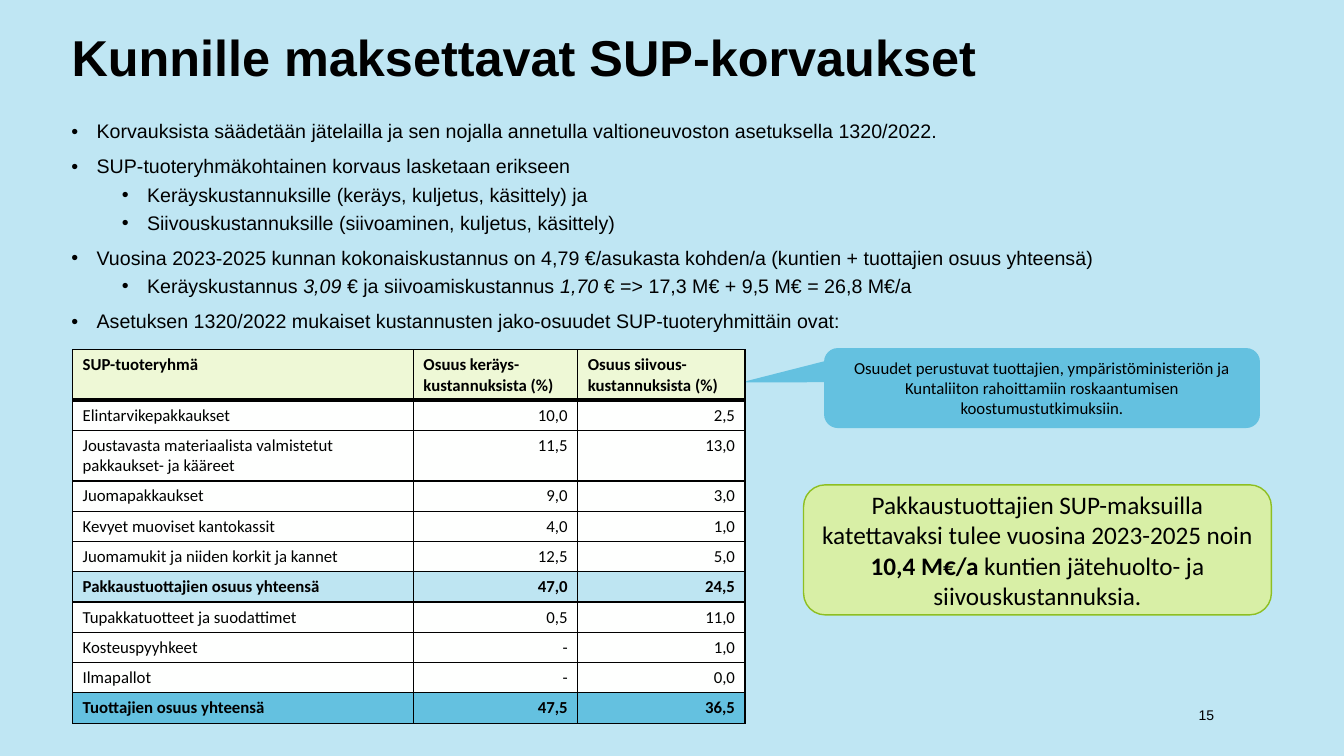
from dataclasses import dataclass
from typing import Any

from lxml import etree
from pptx import Presentation
from pptx.dml.color import RGBColor
from pptx.enum.shapes import MSO_SHAPE
from pptx.enum.text import MSO_ANCHOR, MSO_AUTO_SIZE, PP_ALIGN
from pptx.oxml.ns import qn
from pptx.util import Emu, Pt

CALLOUT = MSO_SHAPE.ROUNDED_RECTANGULAR_CALLOUT
MIDDLE = MSO_ANCHOR.MIDDLE
NO_FIT = MSO_AUTO_SIZE.NONE
LEFT, CENTER, RIGHT = PP_ALIGN.LEFT, PP_ALIGN.CENTER, PP_ALIGN.RIGHT

BLACK, WHITE = "000000", "FEFFFE"
PALE_BLUE, BLUE, PALE_GREEN = "BEE5F2", "64C1E0", "EEF8D6"
Box = tuple[int, int, int, int]


@dataclass
class Bullet:
    text: str  # parts between asterisks are italic
    level: int = 0


@dataclass
class Row:
    cells: tuple[str, str, str]
    fill: str = WHITE
    bold: bool = False
    height: int = 30


@dataclass
class Callout:
    box: Box
    text: str  # parts between asterisks are bold
    size: int
    fill: str
    line: str
    tip: tuple[float, float]


BULLETS = [
    Bullet("Korvauksista säädetään jätelailla ja sen nojalla annetulla "
           "valtioneuvoston asetuksella 1320/2022."),
    Bullet("SUP-tuoteryhmäkohtainen korvaus lasketaan erikseen"),
    Bullet("Keräyskustannuksille (keräys, kuljetus, käsittely) ja", 1),
    Bullet("Siivouskustannuksille (siivoaminen, kuljetus, käsittely)", 1),
    Bullet("Vuosina 2023-2025 kunnan kokonaiskustannus on 4,79 €/asukasta "
           "kohden/a (kuntien + tuottajien osuus yhteensä)"),
    Bullet("Keräyskustannus *3,09* € ja siivoamiskustannus *1,70* € "
           "=> 17,3 M€ + 9,5 M€ = 26,8 M€/a", 1),
    Bullet("Asetuksen 1320/2022 mukaiset kustannusten jako-osuudet "
           "SUP-tuoteryhmittäin ovat:"),
]
COLUMNS = [338, 163, 166]
ROWS = [
    Row(("SUP-tuoteryhmä", "Osuus keräys-kustannuksista (%)",
         "Osuus siivous-kustannuksista (%)"), PALE_GREEN, True, 50),
    Row(("Elintarvikepakkaukset", "10,0", "2,5")),
    Row(("Joustavasta materiaalista valmistetut pakkaukset- ja kääreet",
         "11,5", "13,0"), height=50),
    Row(("Juomapakkaukset", "9,0", "3,0")),
    Row(("Kevyet muoviset kantokassit", "4,0", "1,0")),
    Row(("Juomamukit ja niiden korkit ja kannet", "12,5", "5,0")),
    Row(("Pakkaustuottajien osuus yhteensä", "47,0", "24,5"), PALE_BLUE, True),
    Row(("Tupakkatuotteet ja suodattimet", "0,5", "11,0")),
    Row(("Kosteuspyyhkeet", "-", "1,0")),
    Row(("Ilmapallot", "-", "0,0")),
    Row(("Tuottajien osuus yhteensä", "47,5", "36,5"), BLUE, True),
]
CALLOUTS = [
    Callout((797, 481, 464, 129),
            "Pakkaustuottajien SUP-maksuilla katettavaksi tulee vuosina "
            "2023-2025 noin *10,4 M€/a* kuntien jätehuolto- ja "
            "siivouskustannuksia.", 18, "D8EFA6", "8EBF22", (-0.08, 0.5)),
    Callout((818, 346, 431, 78),
            "Osuudet perustuvat tuottajien, ympäristöministeriön ja "
            "Kuntaliiton rahoittamiin roskaantumisen koostumustutkimuksiin.",
            12, BLUE, BLUE, (-0.68, -0.08)),
]


def px(n: int) -> Emu:
    """100 px to the inch."""
    return Emu(n * 9144)


def rgb(color: str) -> RGBColor:
    return RGBColor.from_string(color)


def style(r: Any, size: int, name: str, bold: bool = False,
          italic: bool = False) -> None:
    r.font.size, r.font.name = Pt(size), name
    r.font.bold, r.font.italic = bold, italic
    r.font.color.rgb = rgb(BLACK)


def write(p: Any, text: str, size: int, name: str, align: Any = LEFT,
          bold: bool = False, mark: str = "bold") -> None:
    """Fill a paragraph; parts between asterisks get the mark."""
    p.alignment = align
    for i, part in enumerate(text.split("*")):
        r = p.add_run()
        r.text = part
        marked = i % 2 == 1
        style(r, size, name, bold or (marked and mark == "bold"),
              marked and mark == "italic")


def text_box(s: Any, box: Box) -> Any:
    tf = s.shapes.add_textbox(*map(px, box)).text_frame
    tf.word_wrap = True
    return tf


def add_title(s: Any, text: str, box: Box) -> None:
    sp = s.shapes.title
    sp.left, sp.top, sp.width, sp.height = map(px, box)
    tf = sp.text_frame
    tf.text = text
    tf.auto_size, tf.vertical_anchor = NO_FIT, MIDDLE
    p = tf.paragraphs[0]
    p.alignment, p.line_spacing = LEFT, 0.9
    style(p.runs[0], 36, "Arial", bold=True)


def add_bullets(s: Any, bullets: list[Bullet], box: Box) -> None:
    tf = text_box(s, box)
    for i, bullet in enumerate(bullets):
        p = tf.add_paragraph() if i else tf.paragraphs[0]
        p.level = bullet.level
        pPr = p._p.get_or_add_pPr()
        pPr.set("marL", str(px(25 + 50 * bullet.level)))
        pPr.set("indent", str(px(-25)))
        etree.SubElement(pPr, qn("a:buFont"), typeface="Arial")
        etree.SubElement(pPr, qn("a:buChar"), char="•")
        p.line_spacing = 0.9
        if i:
            p.space_before = Pt(5 if bullet.level else 10)
        write(p, bullet.text, 14, "Arial", mark="italic")


def add_border(cell: Any, side: str, points: int) -> None:
    ln = etree.SubElement(cell._tc.get_or_add_tcPr(), qn(f"a:ln{side}"),
                          w=str(Pt(points)))
    fill = etree.SubElement(ln, qn("a:solidFill"))
    etree.SubElement(fill, qn("a:srgbClr"), val=BLACK)


def add_shares(s: Any, rows: list[Row], left: int, top: int) -> None:
    size = (sum(COLUMNS), sum(row.height for row in rows))
    table = s.shapes.add_table(len(rows), len(COLUMNS),
                               *map(px, (left, top, *size))).table
    table.horz_banding = False
    for column, width in zip(table.columns, COLUMNS):
        column.width = px(width)
    for i, row in enumerate(rows):
        table.rows[i].height = px(row.height)
        for j, text in enumerate(row.cells):
            cell = table.cell(i, j)
            align = RIGHT if i and j else LEFT
            write(cell.text_frame.paragraphs[0], text, 12, "Calibri", align,
                  row.bold)
            # Heavy rule between the header and the first row
            widths = {"L": 1, "R": 1, "T": 3 if i == 1 else 1,
                      "B": 3 if i == 0 else 1}
            for side, points in widths.items():
                add_border(cell, side, points)
            cell.fill.solid()
            cell.fill.fore_color.rgb = rgb(row.fill)


def add_callout(s: Any, callout: Callout) -> None:
    sp = s.shapes.add_shape(CALLOUT, *map(px, callout.box))
    sp.shadow.inherit = False
    sp.adjustments[0], sp.adjustments[1] = callout.tip
    sp.fill.solid()
    sp.fill.fore_color.rgb = rgb(callout.fill)
    sp.line.color.rgb = rgb(callout.line)
    sp.line.width = Pt(1)
    tf = sp.text_frame
    tf.word_wrap, tf.vertical_anchor = True, MIDDLE
    write(tf.paragraphs[0], callout.text, callout.size, "Calibri", CENTER)


def main() -> None:
    prs = Presentation()
    prs.slide_width, prs.slide_height = px(1333), px(750)
    s = prs.slides.add_slide(prs.slide_layouts[5])
    s.background.fill.solid()
    s.background.fill.fore_color.rgb = rgb("BFE6F3")

    # Title and bullets
    add_title(s, "Kunnille maksettavat SUP-korvaukset", (61, 6, 1245, 107))
    add_bullets(s, BULLETS, (61, 116, 1232, 226))

    # Cost shares and callouts
    add_shares(s, ROWS, 72, 347)
    for callout in CALLOUTS:
        add_callout(s, callout)

    # Slide number
    tf = text_box(s, (914, 689, 300, 40))
    tf.vertical_anchor = MIDDLE
    write(tf.paragraphs[0], "15", 10, "Arial", RIGHT)
    prs.save("out.pptx")


if __name__ == "__main__":
    main()
